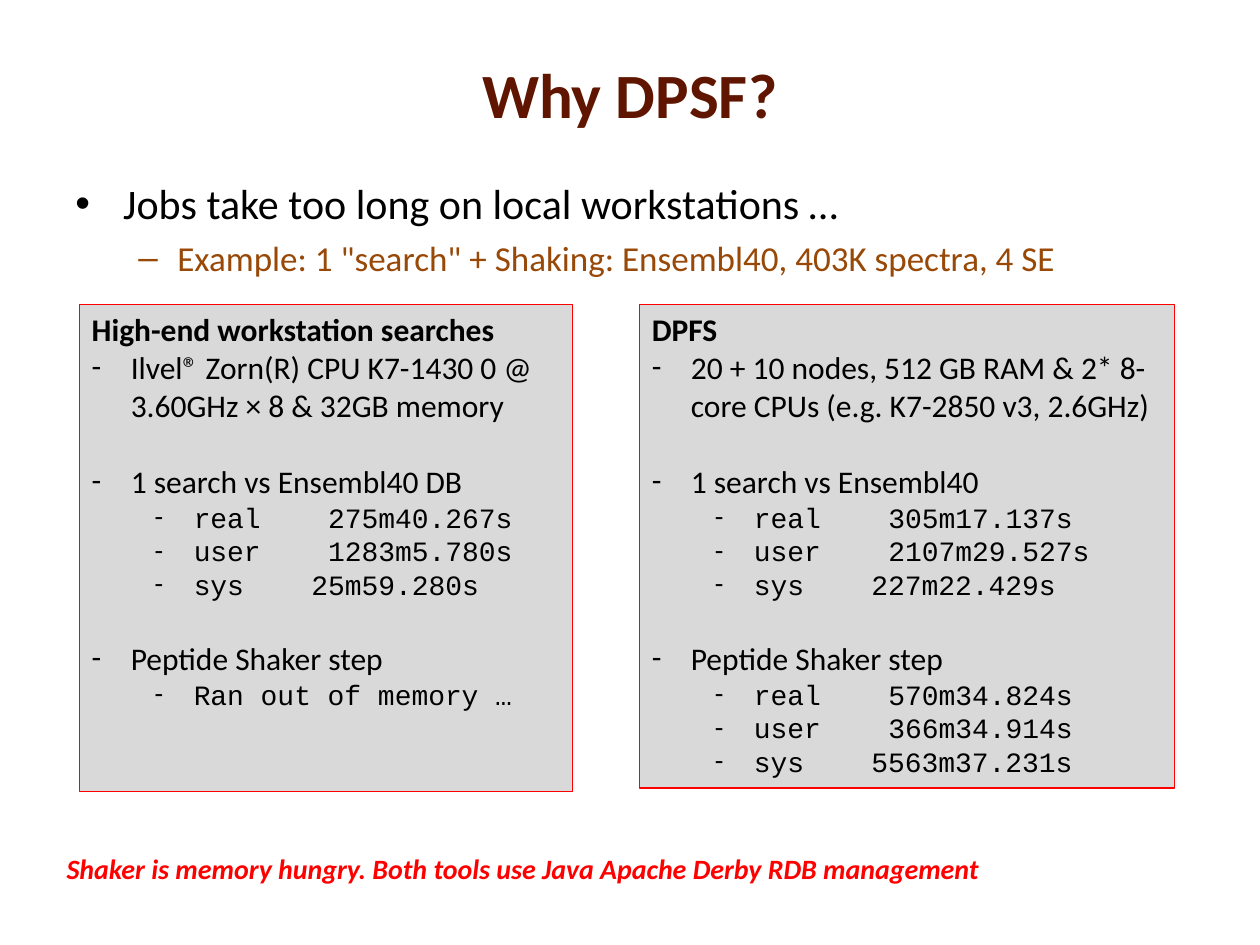
from pptx import Presentation
from pptx.dml.color import RGBColor
from pptx.enum.shapes import MSO_SHAPE
from pptx.enum.text import MSO_ANCHOR, PP_ALIGN
from pptx.oxml.ns import qn
from pptx.util import Inches, Pt
from lxml.etree import SubElement

BLACK = RGBColor(0x00, 0x00, 0x00)
RED = RGBColor(0xFF, 0x00, 0x00)
MAROON = RGBColor(0x5F, 0x15, 0x00)
BROWN = RGBColor(0x98, 0x48, 0x07)
GRAY = RGBColor(0xD9, 0xD9, 0xD9)

LOCAL = [
    ("Ilvel® Zorn(R) CPU K7-1430 0 @ 3.60GHz × 8 & 32GB memory", []),
    ("1 search vs Ensembl40 DB",
     [("real", "275m40.267s"), ("user", "1283m5.780s"), ("sys", "25m59.280s")]),
    ("Peptide Shaker step", [("Ran out of memory …",)]),
]
CLUSTER = [
    ("20 + 10 nodes, 512 GB RAM & 2* 8-core CPUs (e.g. K7-2850 v3, 2.6GHz)", []),
    ("1 search vs Ensembl40",
     [("real", "305m17.137s"), ("user", "2107m29.527s"), ("sys", "227m22.429s")]),
    ("Peptide Shaker step",
     [("real", "570m34.824s"), ("user", "366m34.914s"), ("sys", "5563m37.231s")]),
]


class Deck:
    """Holds the style and the current slide; places are percent shares of its size."""

    sans = "Calibri"
    mono = "Courier New"
    gap = 22

    def __init__(self, wide, high):
        self.show = Presentation()
        self.show.slide_width = Inches(wide)
        self.show.slide_height = Inches(high)
        self.slide = self.show.slides.add_slide(self.show.slide_layouts[6])

    def place(self, left, top, width, height):
        wide, high = self.show.slide_width, self.show.slide_height
        return (int(wide * left / 100), int(high * top / 100),
                int(wide * width / 100), int(high * height / 100))

    def text(self, *area, anchor=MSO_ANCHOR.TOP):
        frame = self.slide.shapes.add_textbox(*self.place(*area)).text_frame
        frame.word_wrap = True
        frame.vertical_anchor = anchor
        return frame

    def panel(self, area, head, items):
        box = self.slide.shapes.add_shape(MSO_SHAPE.RECTANGLE, *self.place(*area))
        box.shadow.inherit = False
        box.fill.solid()
        box.fill.fore_color.rgb = GRAY
        box.line.color.rgb = RED
        box.line.width = Pt(0.75)
        frame = box.text_frame
        frame.word_wrap = True
        frame.vertical_anchor = MSO_ANCHOR.TOP
        self.line(frame, head, 18, bold=True)
        for rank, (item, rows) in enumerate(items):
            para = self.line(frame, item, 18, before=self.gap if rank else 0)
            self.bullet(para, "-", 0.31, 0.31)
            for row in rows:
                para = self.line(frame, "\t".join(row), 16, face=self.mono)
                stop = 0.81 + (len(row[0]) + 4) * 16 * 0.6 / 72
                self.bullet(para, "-", 0.81, 0.31, stop if len(row) > 1 else None)

    def line(self, frame, words, size, color=BLACK, face=sans, before=0,
             bold=False, slant=False, align=PP_ALIGN.LEFT):
        fresh = not frame.paragraphs[0].runs
        para = frame.paragraphs[0] if fresh else frame.add_paragraph()
        para.alignment = align
        para.space_before = Pt(before)
        run = para.add_run()
        run.text = words
        font = run.font
        font.name, font.size, font.bold, font.italic = face, Pt(size), bold, slant
        font.color.rgb = color
        return para

    def bullet(self, para, mark, left, hang, stop=None, face=sans):
        props = para._p.get_or_add_pPr()
        props.set("marL", str(Inches(left)))
        props.set("indent", str(-Inches(hang)))
        SubElement(props, qn("a:buFont"), typeface=face)
        SubElement(props, qn("a:buChar"), char=mark)
        if stop:
            tabs = SubElement(props, qn("a:tabLst"))
            SubElement(tabs, qn("a:tab"), pos=str(Inches(stop)), algn="l")


def main():
    deck = Deck(10, 7.5)
    title = deck.text(5, 4, 90, 11.73, anchor=MSO_ANCHOR.MIDDLE)
    deck.line(title, "Why DPSF?", 36, MAROON, bold=True, align=PP_ALIGN.CENTER)

    body = deck.text(5, 18.13, 90, 71.2)
    para = deck.line(body, "Jobs take too long on local workstations …", 24)
    deck.bullet(para, "•", 0.38, 0.38, face="Arial")
    para = deck.line(body, 'Example: 1 "search" + Shaking: Ensembl40, 403K spectra, 4 SE',
                     20, BROWN, before=4.8)
    deck.bullet(para, "–", 0.81, 0.31, face="Arial")

    deck.panel((6.3, 32.2, 39.15, 51.6), "High-end workstation searches", LOCAL)
    deck.panel((50.75, 32.2, 42.45, 51.2), "DPFS", CLUSTER)

    note = deck.text(4.3, 89.5, 82.4, 4.93)
    deck.line(note, "Shaker is memory hungry. Both tools use Java Apache Derby RDB management",
              16, RED, bold=True, slant=True)
    deck.show.save("out.pptx")


if __name__ == "__main__":
    main()
